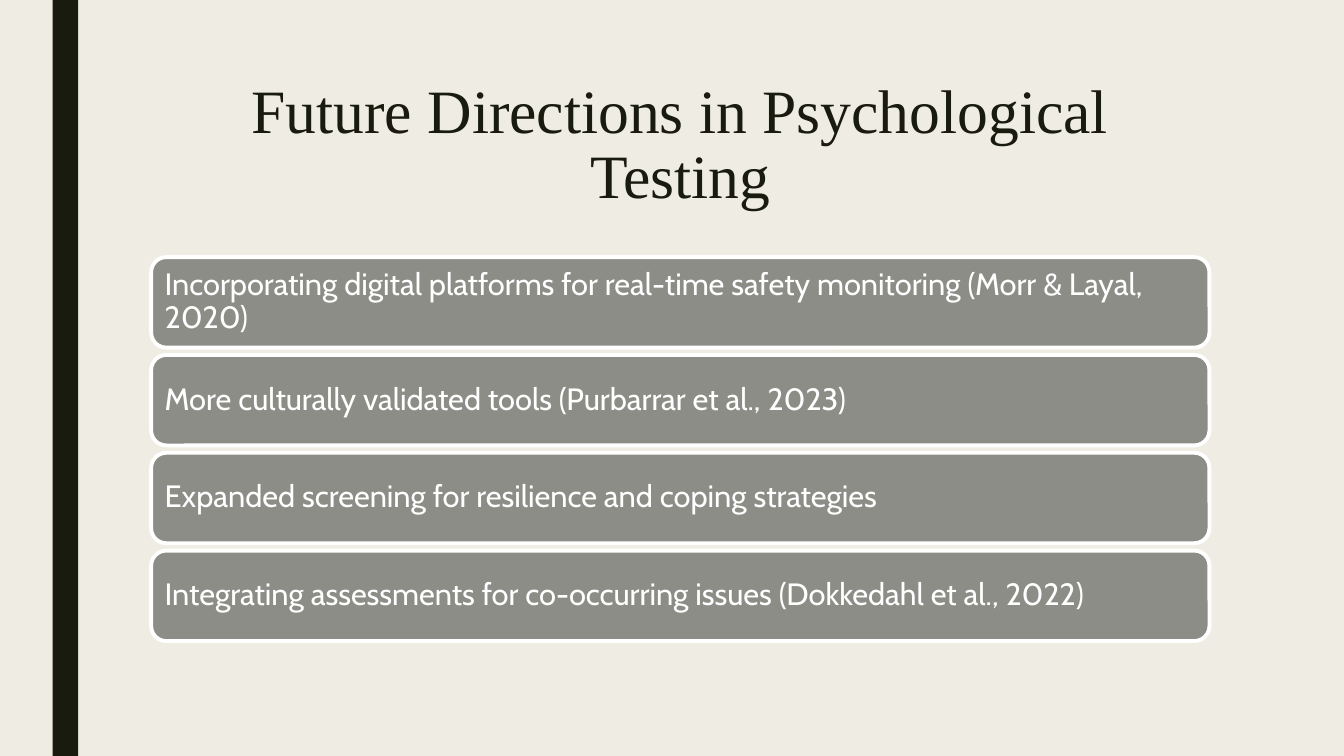
from pptx import Presentation
from pptx.dml.color import RGBColor
from pptx.enum import shapes, text
from pptx.util import Cm, Pt

# Content
TITLE = "Future Directions in Psychological Testing"
POINTS = [
    "Incorporating digital platforms for real-time safety monitoring (Morr & Layal, 2020)",
    "More culturally validated tools (Purbarrar et al., 2023)",
    "Expanded screening for resilience and coping strategies",
    "Integrating assessments for co-occurring issues (Dokkedahl et al., 2022)",
]
COLORS = {"back": "EFEDE3", "dark": "191B0E", "bar": "8C8D86", "white": "FFFFFF"}

# Layout in centimetres
LEFT, WIDTH = 3.81, 26.67
TOP, HEIGHT, STEP = 6.48, 2.28, 2.465
INSET = 0.23


def color(name):
    return RGBColor.from_string(COLORS[name])


def style(par, font, size, tint, align, space):
    par.alignment = align
    par.line_spacing = space
    for run in par.runs:
        run.font.name = font
        run.font.size = Pt(size)
        run.font.color.rgb = color(tint)


def add_box(slide, kind, left, top, width, height, fill):
    box = slide.shapes.add_shape(kind, Cm(left), Cm(top), Cm(width), Cm(height))
    box.shadow.inherit = False
    box.fill.solid()
    box.fill.fore_color.rgb = color(fill)
    box.line.fill.background()
    return box


def add_point(slide, row, words):
    bar = add_box(slide, shapes.MSO_SHAPE.ROUNDED_RECTANGLE,
                  LEFT, TOP + row * STEP, WIDTH, HEIGHT, "bar")
    bar.line.color.rgb = color("white")
    bar.line.width = Pt(2.75)
    frame = bar.text_frame
    frame.text = words
    frame.word_wrap = True
    frame.vertical_anchor = text.MSO_ANCHOR.MIDDLE
    frame.margin_left = frame.margin_right = Cm(INSET)
    frame.margin_top = frame.margin_bottom = Cm(INSET)
    style(frame.paragraphs[0], "Cabin", 22, "white", text.PP_ALIGN.LEFT, 0.9)


def main():
    deck = Presentation()
    deck.slide_width, deck.slide_height = Cm(33.87), Cm(19.05)
    slide = deck.slides.add_slide(deck.slide_layouts[5])
    slide.background.fill.solid()
    slide.background.fill.fore_color.rgb = color("back")

    # Side stripe
    add_box(slide, shapes.MSO_SHAPE.RECTANGLE, 1.33, 0, 0.64, 19.05, "dark")

    # Title
    title = slide.shapes.title
    title.left, title.top = Cm(LEFT), Cm(1.9)
    title.width, title.height = Cm(WIDTH), Cm(4.11)
    frame = title.text_frame
    frame.text = TITLE
    frame.word_wrap = True
    frame.auto_size = text.MSO_AUTO_SIZE.NONE
    frame.vertical_anchor = text.MSO_ANCHOR.TOP
    style(frame.paragraphs[0], "Times New Roman", 44, "dark", text.PP_ALIGN.CENTER, 0.89)

    # Points
    for row, words in enumerate(POINTS):
        add_point(slide, row, words)

    deck.save("out.pptx")


if __name__ == "__main__":
    main()
